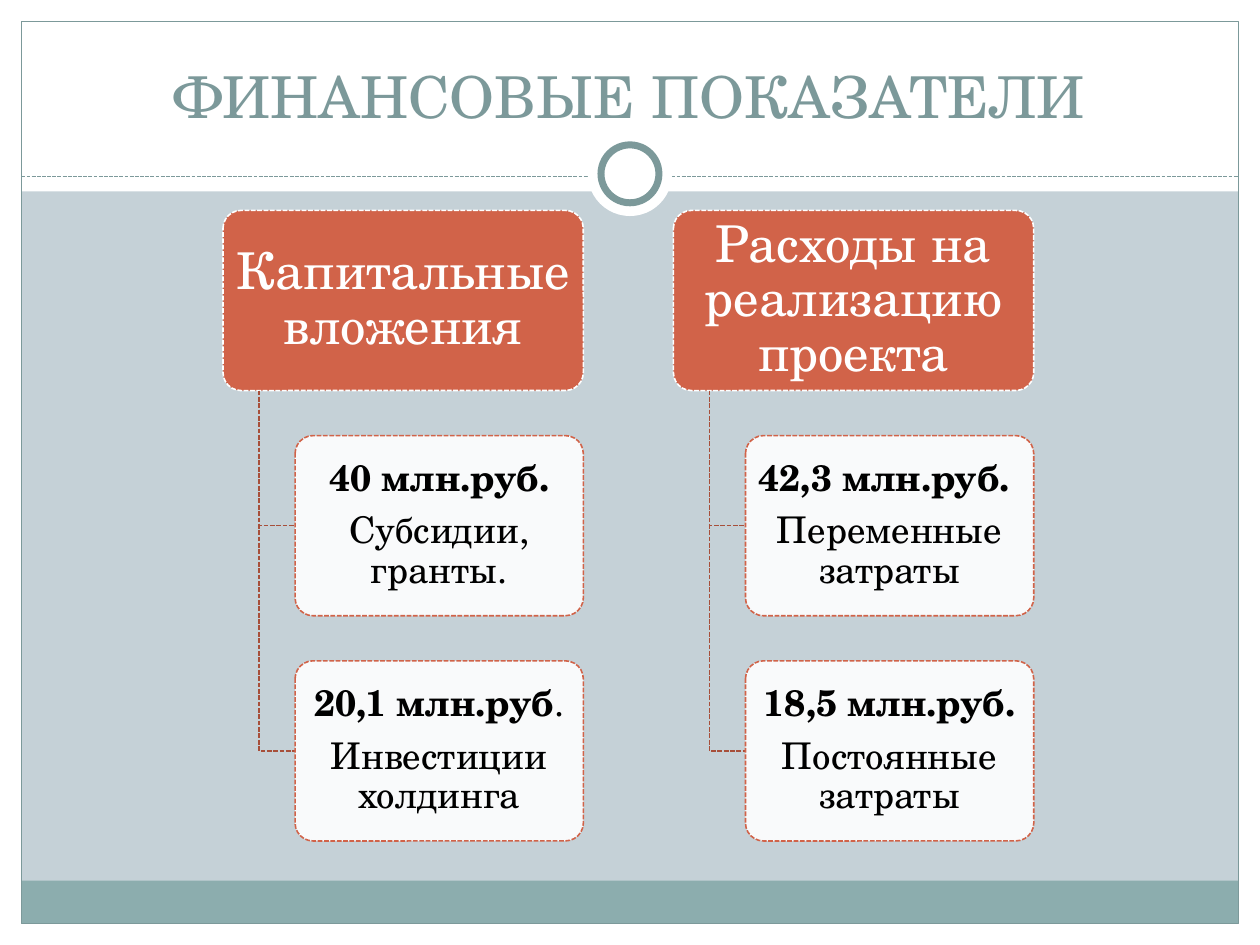
import pptx
import pptx.dml.color
import pptx.enum.dml
import pptx.enum.shapes
import pptx.enum.text
import pptx.oxml.ns
import pptx.util
from lxml import etree

RGBColor = pptx.dml.color.RGBColor
WHITE = RGBColor(0xFF, 0xFF, 0xFF)
BLACK = RGBColor(0x00, 0x00, 0x00)
BACKGROUND = RGBColor(0xC5, 0xD1, 0xD7)
FOOTER = RGBColor(0x8C, 0xAD, 0xAE)
TEAL = RGBColor(0x7C, 0x99, 0x9A)
ORANGE = RGBColor(0xD1, 0x63, 0x49)
BRANCH = RGBColor(0xA7, 0x4F, 0x3A)

FONT = "TeX Gyre Schola"
Inches = pptx.util.Inches
Pt = pptx.util.Pt
Shape = pptx.enum.shapes.MSO_SHAPE
DASH = pptx.enum.dml.MSO_LINE.SQUARE_DOT  # written to the file as sysDash
WIDTH, HEIGHT, MARGIN = 10, 7.5, 0.17


def add_styled_shape(kind, left, top, width, height, fill=None, line=None, line_width=0.75):
    shape = page.shapes.add_shape(kind, *map(Inches, (left, top, width, height)))
    shape.shadow.inherit = False
    if fill is None:
        shape.fill.background()
    else:
        shape.fill.solid()
        shape.fill.fore_color.rgb = fill
    if line is None:
        shape.line.fill.background()
    else:
        shape.line.color.rgb = line
        shape.line.width = Pt(line_width)
    return shape


def write_text(shape, lines, size, color, inset=0):
    """Centre the lines in the shape, one paragraph each."""
    frame = shape.text_frame
    frame.word_wrap = True
    frame.vertical_anchor = pptx.enum.text.MSO_ANCHOR.MIDDLE
    frame.margin_left = frame.margin_right = Inches(inset)
    frame.margin_top = frame.margin_bottom = 0
    frame.text = "\n".join(lines)
    for para in frame.paragraphs:
        para.alignment = pptx.enum.text.PP_ALIGN.CENTER
        para.line_spacing = 0.9
        para.space_after = Pt(0.35 * size)
        for span in para.runs:
            span.font.name = FONT
            span.font.size = Pt(size)
            span.font.color.rgb = color


deck = pptx.Presentation()
deck.slide_width, deck.slide_height = Inches(WIDTH), Inches(HEIGHT)
page = deck.slides.add_slide(deck.slide_layouts[6])
page.background.fill.solid()
page.background.fill.fore_color.rgb = BACKGROUND

# White margins, footer band and frame
inner_width, inner_height = WIDTH - 2 * MARGIN, HEIGHT - 2 * MARGIN
for left, top, width, height, fill in (
    (0, HEIGHT - MARGIN, WIDTH, MARGIN, WHITE),
    (0, 0, WIDTH, 1.52, WHITE),
    (0, 0, MARGIN, HEIGHT, WHITE),
    (WIDTH - MARGIN, 0, MARGIN, HEIGHT, WHITE),
    (MARGIN, 6.99, inner_width, 0.34, FOOTER),
):
    add_styled_shape(Shape.RECTANGLE, left, top, width, height, fill)
add_styled_shape(Shape.RECTANGLE, MARGIN, MARGIN, inner_width, inner_height, line=TEAL)

# Dashed rule with the ring at its middle
rule = page.shapes.add_connector(
    pptx.enum.shapes.MSO_CONNECTOR.STRAIGHT,
    Inches(MARGIN), Inches(1.4), Inches(WIDTH - MARGIN), Inches(1.4),
)
rule.line.color.rgb = TEAL
rule.line.width = Pt(0.75)
rule.line.dash_style = DASH
etree.SubElement(rule._element.spPr, pptx.oxml.ns.qn("a:effectLst"))
for size, line in ((0.67, None), (0.46, TEAL)):
    add_styled_shape(Shape.OVAL, WIDTH / 2 - size / 2, 1.38 - size / 2, size, size, WHITE, line, 4)

title = page.shapes.add_textbox(*map(Inches, (0.33, 0.25, 9.33, 0.83)))
write_text(title, ["ФИНАНСОВЫЕ ПОКАЗАТЕЛИ"], 33, TEAL, 0.1)
title.text_frame.vertical_anchor = pptx.enum.text.MSO_ANCHOR.BOTTOM
title.text_frame.margin_bottom = Inches(0.05)
title.text_frame.paragraphs[0].line_spacing = 1.0
title.text_frame.paragraphs[0].space_after = Pt(0)

# Two trees on a grid whose unit is the box height
BOX = 1.43
HEAD_WIDTH = 2 * BOX
ROW, COLUMN = 1.25 * BOX, 2.5 * BOX
TREE_LEFT, TREE_TOP = 1.77, 1.67
TREES = (
    ("Капитальные вложения", (
        ("40 млн.руб.", "Субсидии, гранты."),
        ("20,1 млн.руб.", "Инвестиции холдинга"),
    )),
    ("Расходы на реализацию проекта", (
        ("42,3 млн.руб. ", "Переменные затраты"),
        ("18,5 млн.руб.", "Постоянные затраты"),
    )),
)
for column, (heading, items) in enumerate(TREES):
    left = TREE_LEFT + column * COLUMN
    stem, item_left = left + 0.1 * HEAD_WIDTH, left + 0.2 * HEAD_WIDTH
    head = add_styled_shape(
        Shape.ROUNDED_RECTANGLE, left, TREE_TOP, HEAD_WIDTH, BOX, ORANGE, WHITE, 0.9)
    head.adjustments[0] = 0.1
    head.line.dash_style = DASH
    write_text(head, [heading], 29, WHITE, 0.02)

    for row, (amount, label) in enumerate(items, start=1):
        top = TREE_TOP + row * ROW
        middle = top + BOX / 2
        builder = page.shapes.build_freeform(Inches(stem), Inches(TREE_TOP + BOX))
        builder.add_line_segments(
            [(Inches(stem), Inches(middle)), (Inches(item_left), Inches(middle))], close=False)
        branch = builder.convert_to_shape()
        branch.shadow.inherit = False
        branch.fill.background()
        branch.line.color.rgb = BRANCH
        branch.line.width = Pt(0.9)
        branch.line.dash_style = DASH

        item = add_styled_shape(
            Shape.ROUNDED_RECTANGLE, item_left, top, 0.8 * HEAD_WIDTH, BOX, WHITE, ORANGE, 0.9)
        item.adjustments[0] = 0.1
        item.line.dash_style = DASH
        fill_color = item._element.spPr.find(".//" + pptx.oxml.ns.qn("a:srgbClr"))
        etree.SubElement(fill_color, pptx.oxml.ns.qn("a:alpha"), val="90000")
        write_text(item, [amount, label], 21, BLACK)
        amount_para = item.text_frame.paragraphs[0]
        amount_para.runs[0].font.bold = True
        if amount.startswith("20,1"):  # this amount ends in a regular-weight full stop
            amount_para.runs[0].text = amount[:-1]
            stop = amount_para.add_run()
            stop.text = amount[-1]
            stop.font.name = FONT
            stop.font.size = Pt(21)
            stop.font.color.rgb = BLACK

deck.save("out.pptx")
